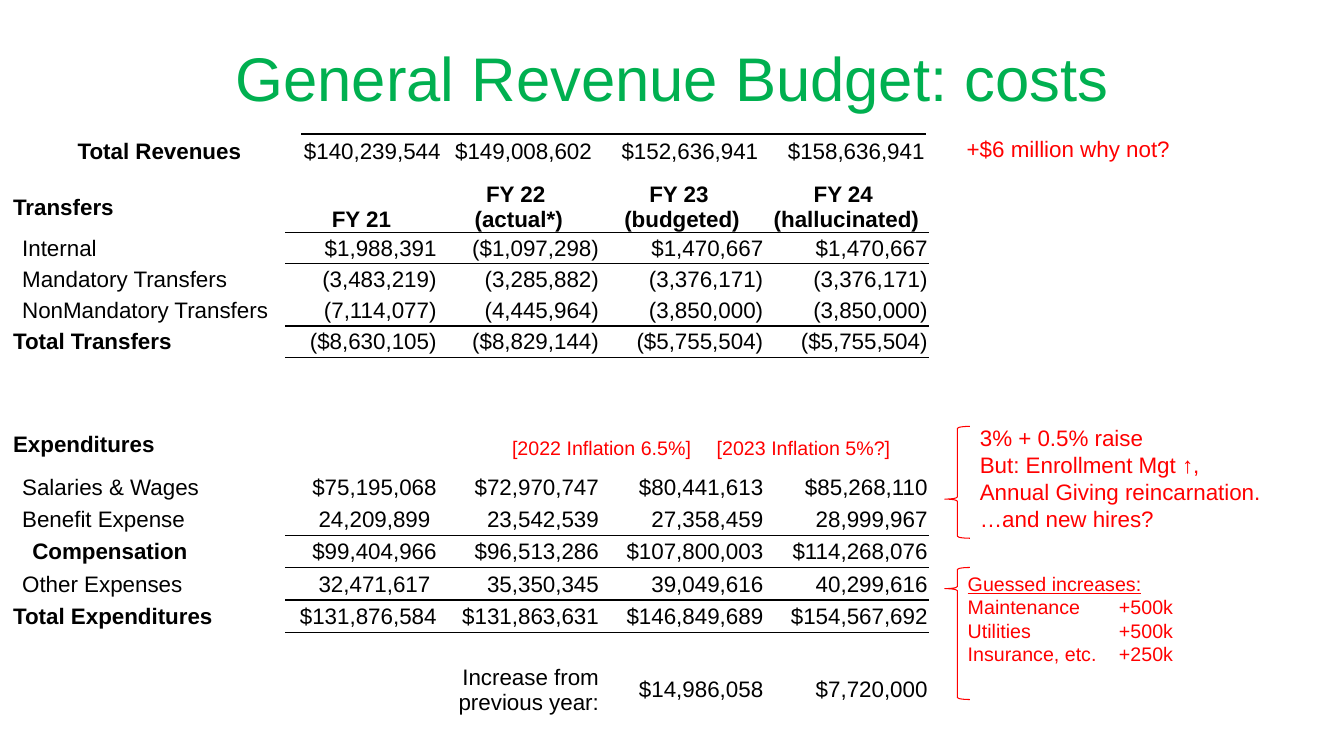
import dataclasses

import lxml.etree
import pptx
import pptx.dml.color
import pptx.enum.shapes
import pptx.enum.text
import pptx.oxml.ns
import pptx.util

Inches = pptx.util.Inches
Align = pptx.enum.text.PP_ALIGN
Anchor = pptx.enum.text.MSO_ANCHOR
qn = pptx.oxml.ns.qn


@dataclasses.dataclass(frozen=True)
class Theme:
    font: str = "Arial"
    black: str = "000000"
    white: str = "FFFFFF"
    green: str = "00B050"
    red: str = "FF0000"
    title: int = 44
    body: int = 16
    note: int = 14
    rule: float = 1
    brace: float = 0.75
    plain: str = "{2D5ABB26-0587-4C30-8999-92F81FD0307C}"


THEME = Theme()

COSTS = [
    ("Transfers", "FY 21", "FY 22 \n(actual*)", "FY 23 \n(budgeted)", "FY 24 \n(hallucinated)"),
    ("Internal", "$1,988,391", "($1,097,298)", "$1,470,667", "$1,470,667"),
    ("Mandatory Transfers", "(3,483,219)", "(3,285,882)", "(3,376,171)", "(3,376,171)"),
    ("NonMandatory Transfers", "(7,114,077)", "(4,445,964)", "(3,850,000)", "(3,850,000)"),
    ("Total Transfers", "($8,630,105)", "($8,829,144)", "($5,755,504)", "($5,755,504)"),
    ("", "", "", "", ""),
    ("Expenditures", "", "", "", ""),
    ("Salaries & Wages", "$75,195,068", "$72,970,747", "$80,441,613", "$85,268,110"),
    ("Benefit Expense", "24,209,899 ", "23,542,539", "27,358,459", "28,999,967"),
    ("Compensation", "$99,404,966", "$96,513,286", "$107,800,003", "$114,268,076"),
    ("Other Expenses", "32,471,617 ", "35,350,345", "39,049,616", "40,299,616"),
    ("Total Expenditures", "$131,876,584", "$131,863,631", "$146,849,689", "$154,567,692"),
    ("", "", "", "", ""),
    ("", "", "Increase from previous year:", "$14,986,058", "$7,720,000"),
]
SALES = [("Total Revenues", "$140,239,544", "$149,008,602", "$152,636,941", "$158,636,941")]
BOLD = {"Transfers", "Total Transfers", "Expenditures", "Compensation",
        "Total Expenditures", "Total Revenues"}
INDENT = {"Internal": 0.1, "Mandatory Transfers": 0.1, "NonMandatory Transfers": 0.1,
          "Salaries & Wages": 0.1, "Benefit Expense": 0.1, "Compensation": 0.2,
          "Other Expenses": 0.1}


def color(code):
    return pptx.dml.color.RGBColor.from_string(code)


def write(frame, text, size=THEME.body, ink=THEME.black, bold=False,
          align=Align.LEFT, lined=(), space=None):
    for i, line in enumerate(text.split("\n")):
        para = frame.paragraphs[0] if i == 0 else frame.add_paragraph()
        para.alignment = align
        para.line_spacing = space
        run = para.add_run()
        run.text = line
        font = run.font
        font.name, font.size, font.bold = THEME.font, pptx.util.Pt(size), bold
        font.color.rgb = color(ink)
        font.underline = i in lined


def add_text(slide, text, left, top, width, height, anchor=Anchor.TOP, **style):
    box = slide.shapes.add_textbox(*map(Inches, (left, top, width, height)))
    box.text_frame.word_wrap = True
    box.text_frame.vertical_anchor = anchor
    write(box.text_frame, text, **style)


def add_rule(cell, side):
    line = lxml.etree.Element(qn("a:" + side), w=str(pptx.util.Pt(THEME.rule)))
    fill = lxml.etree.SubElement(line, qn("a:solidFill"))
    lxml.etree.SubElement(fill, qn("a:srgbClr"), val=THEME.black)
    cell._tc.get_or_add_tcPr().insert(0, line)


def add_cell(cell, text, label, head):
    cell.margin_left = Inches(INDENT.get(text, 0.01))
    cell.margin_top = cell.margin_right = Inches(0.01)
    cell.margin_bottom = 0
    cell.vertical_anchor = Anchor.BOTTOM if head and not label else Anchor.MIDDLE
    cell.fill.solid()
    cell.fill.fore_color.rgb = color(THEME.white)
    if text:
        align = Align.LEFT if label else Align.CENTER if head else Align.RIGHT
        write(cell.text_frame, text, bold=head or text in BOLD, align=align)


def add_grid(slide, data, left, top, widths, heights, below=(), above=(), head=None):
    frame = slide.shapes.add_table(len(data), len(widths), Inches(left), Inches(top),
                                   Inches(sum(widths)), Inches(sum(heights)))
    grid = frame.table
    grid.first_row = grid.horz_banding = False
    grid._tbl.tblPr.find(qn("a:tableStyleId")).text = THEME.plain
    for col, width in zip(grid.columns, widths):
        col.width = Inches(width)
    for r, (row, height) in enumerate(zip(data, heights)):
        grid.rows[r].height = Inches(height)
        for c, text in enumerate(row):
            cell = grid.cell(r, c)
            add_cell(cell, text, c == 0, r == head)
            if c and r in below:
                add_rule(cell, "lnB")
            if c and (r in above or r - 1 in below):
                add_rule(cell, "lnT")


def add_brace(slide, top, height, point):
    kind = pptx.enum.shapes.MSO_SHAPE.LEFT_BRACE
    brace = slide.shapes.add_shape(kind, Inches(9.37), Inches(top),
                                   Inches(0.25), Inches(height))
    brace.adjustments[0] = 0.08
    brace.adjustments[1] = point
    brace.shadow.inherit = False
    brace.fill.background()
    brace.line.color.rgb = color(THEME.red)
    brace.line.width = pptx.util.Pt(THEME.brace)


def main():
    deck = pptx.Presentation()
    deck.slide_width, deck.slide_height = Inches(13.33), Inches(7.5)
    slide = deck.slides.add_slide(deck.slide_layouts[6])

    heights = [0.5] + [0.31] * 4 + [0.59, 0.54] + [0.32] * 5 + [0.31, 0.5]
    add_grid(slide, COSTS, 0.12, 1.8, [2.71, 1.51, 1.61, 1.63, 1.63], heights,
             below={0, 3, 8, 10}, head=0)
    add_text(slide, "General Revenue Budget: costs", 0.92, 0.08, 11.5, 1.45,
             anchor=Anchor.MIDDLE, size=THEME.title, ink=THEME.green,
             align=Align.CENTER, space=0.9)
    add_text(slide, "Guessed increases:\nMaintenance \t+500k\nUtilities\t\t+500k\n"
             "Insurance, etc.\t+250k", 9.5, 5.62, 3.24, 1.31,
             size=THEME.note, ink=THEME.red, lined={0})
    add_grid(slide, SALES, 0.76, 1.33, [2.23, 1.39, 1.5, 1.65, 1.65], [0.34], above={0})
    add_text(slide, "+$6 million why not?", 9.49, 1.29, 2.44, 0.37, ink=THEME.red)
    add_brace(slide, 5.63, 1.31, 0.16)
    add_text(slide, "3% + 0.5% raise\nBut: Enrollment Mgt ↑,\nAnnual Giving reincarnation.\n"
             "…and new hires?", 9.62, 4.16, 3.47, 1.18, ink=THEME.red)
    add_brace(slide, 4.23, 1.11, 0.65)
    for text, left in (("[2022 Inflation 6.5%]", 4.98), ("[2023 Inflation 5%?]", 7.01)):
        add_text(slide, text, left, 4.28, 2.05, 0.34, size=THEME.note, ink=THEME.red)
    deck.save("out.pptx")


if __name__ == "__main__":
    main()
